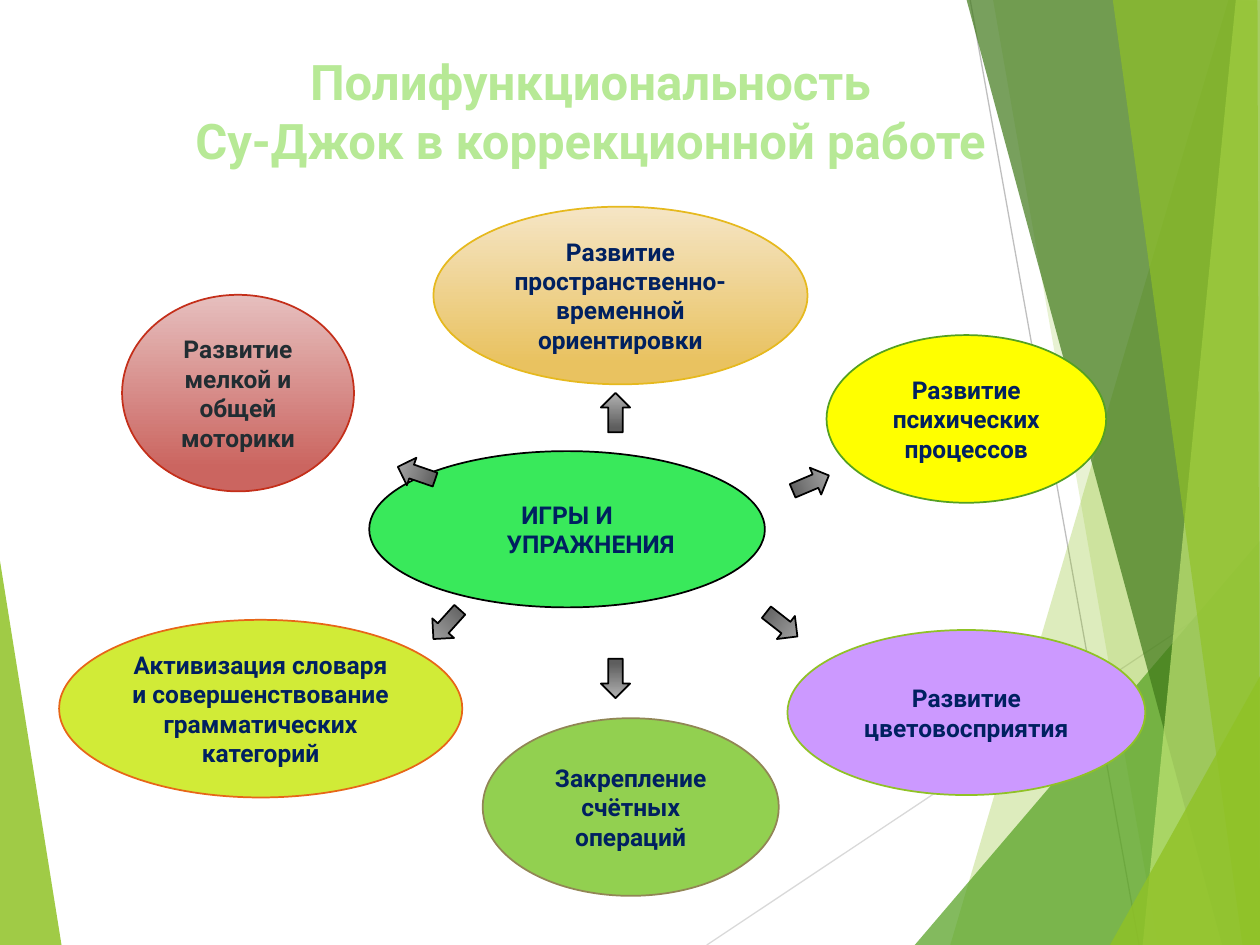
from lxml.etree import SubElement
from pptx import Presentation
from pptx.dml.color import RGBColor
from pptx.enum.shapes import MSO_CONNECTOR, MSO_SHAPE
from pptx.enum.text import MSO_ANCHOR, PP_ALIGN
from pptx.oxml.ns import qn
from pptx.util import Pt

FONT = "Roboto"
COLORS = {
    "lime": "90C226", "green": "54A021", "forest": "3F7819", "pale": "C0E474",
    "light_gray": "D9D9D9", "gray": "BFBFBF", "title": "B7E996",
    "navy": "002060", "charcoal": "212D32", "black": "000000",
    "center": "39E95B", "sand": "F5E5C5", "gold": "E9C260", "amber": "E6B91E",
    "yellow": "FFFF00", "violet": "CC99FF", "grass": "92D050", "olive": "918655",
    "citrus": "D1EB37", "orange": "E76618", "rose": "E6BFBE", "coral": "CB6560",
    "red": "C42F1A", "silver": "B2B2B2", "steel": "5E5E5E",
}

LEFT_FACET = ("lime", 85, [(-0.7, 316), (35.3, 540.7), (-0.7, 540)])
RIGHT_FACETS = [
    ("lime", 30, [(702, 0), (543, 540), (721, 540.7), (720.7, 0.7)]),
    ("lime", 20, [(567.4, -0.7), (661.7, 540), (720.7, 540), (720.7, -0.7)]),
    ("green", 72, [(522.7, 540), (720, 309), (720.7, 540)]),
    ("forest", 70, [(552.2, -0.7), (698.4, 540), (720.7, 540), (720.7, -0.7)]),
    ("pale", 70, [(706.3, -0.7), (653, 540), (720.7, 540), (720, -0.7)]),
    ("lime", 65, [(635.8, -0.7), (710, 540), (720, 540), (718.6, -0.7)]),
    ("lime", 80, [(634.3, 540), (720.7, 385.2), (720.7, 540)]),
]
RAYS = [("light_gray", 403.9, 540, 720.7, 329), ("gray", 554.4, 0, 650.9, 540)]

TOPICS = [
    ("Развитие пространственно-временной ориентировки",
     (247.7, 118.1, 213.8, 101.5), ("sand", "gold"), "amber", "navy"),
    ("Развитие психических процессов",
     (472.3, 191.5, 159.8, 95.8), ("yellow",), "green", "navy"),
    ("Развитие цветовосприятия",
     (450, 360, 204.5, 94.3), ("violet",), "lime", "navy"),
    ("Закрепление счётных операций",
     (275.8, 410.4, 169.2, 101.5), ("grass",), "olive", "navy"),
    ("Активизация словаря и совершенствование грамматических категорий",
     (33.8, 354.2, 230.4, 101.5), ("citrus",), "orange", "navy"),
    ("Развитие мелкой и общей моторики",
     (69.8, 168.5, 132.5, 112.3), ("rose", "coral"), "red", "charcoal"),
]

ARROW_WIDTH, ARROW_HEIGHT = 16.7, 22.5
ARROWS = [
    (351.7, 387.7, 180), (446.8, 356.8, 128), (255.2, 356.8, 222),
    (238, 270.4, 289), (463.3, 276.1, 67), (351.7, 235.8, 0),
]


def rgb(name):
    return RGBColor.from_string(COLORS[name])


def paint(shape, fills, outline):
    shape.shadow.inherit = False
    if len(fills) == 1:
        shape.fill.solid()
        shape.fill.fore_color.rgb = rgb(fills[0])
    else:
        shape.fill.gradient()
        shape.fill.gradient_angle = 270
        for stop, name, position in zip(shape.fill.gradient_stops, fills, (0, 0.88)):
            stop.color.rgb = rgb(name)
            stop.position = position
    if outline:
        shape.line.color.rgb = rgb(outline)
        shape.line.width = Pt(1)
    else:
        shape.line.fill.background()


def add_run(paragraph, text, size, color):
    run = paragraph.add_run()
    run.text = text
    run.font.name = FONT
    run.font.size = Pt(size)
    run.font.bold = True
    run.font.color.rgb = rgb(color)


def add_facet(slide, color, opacity, points):
    corners = [(Pt(x), Pt(y)) for x, y in points]
    builder = slide.shapes.build_freeform(*corners[0])
    builder.add_line_segments(corners[1:])
    shape = builder.convert_to_shape()
    paint(shape, (color,), None)
    fill_color = shape.element.find(".//" + qn("a:srgbClr"))
    SubElement(fill_color, qn("a:alpha")).set("val", str(opacity * 1000))


def add_ray(slide, color, *ends):
    connector = slide.shapes.add_connector(MSO_CONNECTOR.STRAIGHT, *map(Pt, ends))
    connector.line.color.rgb = rgb(color)
    connector.line.width = Pt(0.75)
    SubElement(connector.element.spPr, qn("a:effectLst"))


def add_title(slide, lines):
    box = slide.shapes.add_textbox(Pt(42.5), Pt(25.9), Pt(589.7), Pt(126))
    box.text_frame.word_wrap = True
    paragraph = box.text_frame.paragraphs[0]
    paragraph.alignment = PP_ALIGN.CENTER
    for index, line in enumerate(lines):
        if index:
            paragraph.add_line_break()
        add_run(paragraph, line, 28, "title")


def add_ellipse(slide, text, box, fills, outline, text_color):
    shape = slide.shapes.add_shape(MSO_SHAPE.OVAL, *map(Pt, box))
    paint(shape, fills, outline)
    shape.text_frame.word_wrap = True
    shape.text_frame.vertical_anchor = MSO_ANCHOR.MIDDLE
    paragraph = shape.text_frame.paragraphs[0]
    paragraph.alignment = PP_ALIGN.CENTER
    add_run(paragraph, text, 14, text_color)
    return paragraph


def add_center(slide):
    paragraph = add_ellipse(slide, "ИГРЫ И УПРАЖНЕНИЯ", (211, 257.8, 226.1, 89.3),
                            ("center",), "black", "navy")
    paragraph.space_before = Pt(10)
    properties = paragraph._p.get_or_add_pPr()
    properties.set("marL", str(Pt(27)))
    properties.set("indent", str(Pt(-27)))


def add_arrow(slide, center_x, center_y, rotation):
    shape = slide.shapes.add_shape(
        MSO_SHAPE.UP_ARROW, Pt(center_x - ARROW_WIDTH / 2),
        Pt(center_y - ARROW_HEIGHT / 2), Pt(ARROW_WIDTH), Pt(ARROW_HEIGHT))
    shape.rotation = rotation
    paint(shape, ("silver", "steel"), "black")


def main():
    presentation = Presentation()
    presentation.slide_width, presentation.slide_height = Pt(720), Pt(540)
    slide = presentation.slides.add_slide(presentation.slide_layouts[6])
    add_facet(slide, *LEFT_FACET)
    for ray in RAYS:
        add_ray(slide, *ray)
    for facet in RIGHT_FACETS:
        add_facet(slide, *facet)
    add_title(slide, ["Полифункциональность", "Су-Джок в коррекционной работе"])
    add_center(slide)
    for topic in TOPICS:
        add_ellipse(slide, *topic)
    for arrow in ARROWS:
        add_arrow(slide, *arrow)
    presentation.save("out.pptx")


if __name__ == "__main__":
    main()
